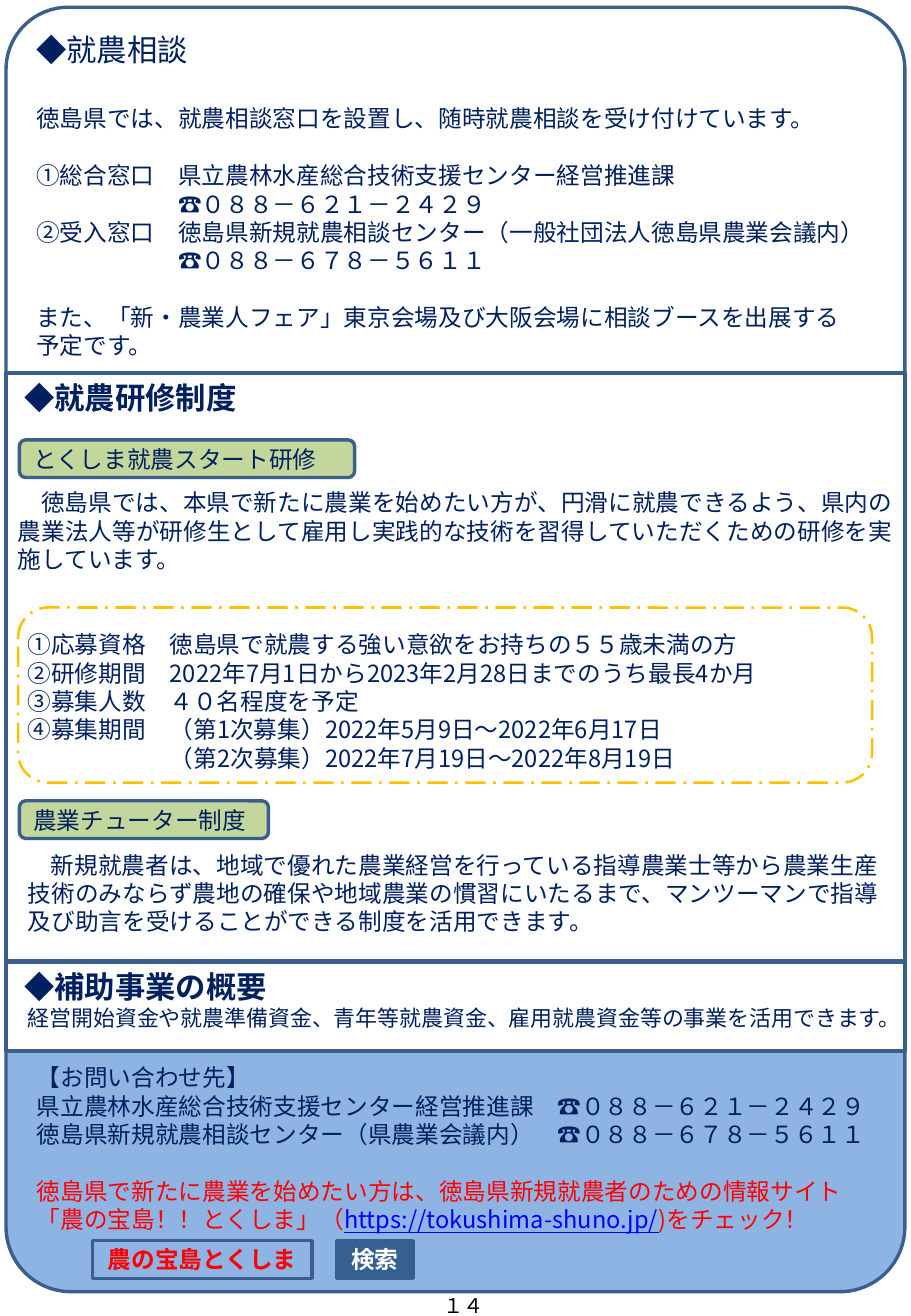
from dataclasses import dataclass

import lxml.etree
import pptx
import pptx.dml.color
import pptx.enum.dml
import pptx.enum.shapes
import pptx.enum.text
import pptx.oxml.ns
import pptx.util

PX = 9144  # 100 px to the inch
NOTO, LATIN = "Noto Sans CJK JP", "Calibri"
NAVY, RED, BLUE, WHITE, BLACK = "002060", "FF0000", "0000FF", "FFFFFF", "000000"
EDGE, GREEN, SKY, STEEL, GOLD = "3A5F8C", "C3D69B", "8EB4E3", "376092", "FFC000"
SITE = "https://tokushima-shuno.jp/"
LEAD = 1.2  # line pitch per point of text
HEAD, BODY = 18, 14
GAP, WIDE = BODY * LEAD, HEAD * LEAD  # one empty line of each size

KIND = pptx.enum.shapes.MSO_SHAPE
RECT, ROUND, TAB = KIND.RECTANGLE, KIND.ROUNDED_RECTANGLE, KIND.ROUND_2_SAME_RECTANGLE
TOP = pptx.enum.text.MSO_ANCHOR.TOP
MID = pptx.enum.text.MSO_ANCHOR.MIDDLE


@dataclass
class Row:
    text: str
    size: int = BODY
    left: int = 0  # px
    first: int = 0  # px, first line only
    before: float = 0  # pt
    color: str = NAVY
    bold: bool = False
    font: str = NOTO
    center: bool = False
    link: str = ""


@dataclass
class Box:
    kind: KIND | None  # None makes a plain text box
    at: tuple[int, int, int, int]
    rows: tuple[Row, ...] = ()
    fill: str = ""
    line: str = EDGE
    width: float = 2
    adjust: tuple[float, ...] = ()
    anchor: pptx.enum.text.MSO_ANCHOR = TOP
    pad: int = 5  # px above the text
    dash: bool = False
    wrap: bool = True


def rgb(code: str) -> pptx.dml.color.RGBColor:
    return pptx.dml.color.RGBColor.from_string(code)


def write(para, row: Row) -> None:
    props = para._p.get_or_add_pPr()
    props.set("marL", str(row.left * PX))
    props.set("indent", str(row.first * PX))
    side = pptx.enum.text.PP_ALIGN
    para.alignment = side.CENTER if row.center else side.LEFT
    para.line_spacing = pptx.util.Pt(row.size * LEAD)
    if row.before:
        para.space_before = pptx.util.Pt(row.before)
    font = para.font
    font.size, font.bold, font.name = pptx.util.Pt(row.size), row.bold, row.font
    font.color.rgb = rgb(row.color)
    # East Asian typeface
    base = props.find(pptx.oxml.ns.qn("a:defRPr"))
    lxml.etree.SubElement(base, pptx.oxml.ns.qn("a:ea")).set("typeface", NOTO)
    parts = row.text.partition(row.link) if row.link else (row.text,)
    for part in parts:
        run = para.add_run()
        run.text = part
        if part == row.link:
            run.font.color.rgb = rgb(BLUE)
            run.font.underline = True


def draw(slide, box: Box) -> None:
    place = [n * PX for n in box.at]
    if box.kind is None:
        shape = slide.shapes.add_textbox(*place)
    else:
        shape = slide.shapes.add_shape(box.kind, *place)
        shape.shadow.inherit = False
        for i, value in enumerate(box.adjust):
            shape.adjustments[i] = value
        if box.fill:
            shape.fill.solid()
            shape.fill.fore_color.rgb = rgb(box.fill)
        else:
            shape.fill.background()
        shape.line.color.rgb = rgb(box.line)
        shape.line.width = pptx.util.Pt(box.width)
        if box.dash:
            shape.line.dash_style = pptx.enum.dml.MSO_LINE.LONG_DASH_DOT
    frame = shape.text_frame
    frame.word_wrap = box.wrap
    frame.vertical_anchor = box.anchor
    frame.margin_left = frame.margin_right = 10 * PX
    frame.margin_top, frame.margin_bottom = box.pad * PX, 5 * PX
    for i, row in enumerate(box.rows):
        write(frame.add_paragraph() if i else frame.paragraphs[0], row)


def label(text: str, top: int, width: int) -> Box:
    return Box(ROUND, (16, top, width, 31), (Row(text),), GREEN,
               adjust=(0.17,), anchor=MID)


def button(text: str, left: int, width: int, color: str, fill: str = "") -> Box:
    row = Row(text, color=color, bold=True, font=LATIN, center=True)
    return Box(RECT, (left, 1021, width, 31), (row,), fill, anchor=MID)


BOXES = (
    # Advice desk
    Box(TAB, (5, 6, 740, 301), (
        Row("◆就農相談", HEAD, font=LATIN),
        Row("徳島県では、就農相談窓口を設置し、随時就農相談を受け付けています。", before=WIDE),
        Row("①総合窓口　県立農林水産総合技術支援センター経営推進課", before=GAP),
        Row("☎０８８－６２１－２４２９", left=117),
        Row("②受入窓口　徳島県新規就農相談センター（一般社団法人徳島県農業会議内）"),
        Row("☎０８８－６７８－５６１１", left=117),
        Row("また、「新・農業人フェア」東京会場及び大阪会場に相談ブースを出展する", before=GAP),
        Row("予定です。"),
    ), adjust=(0.17, 0)),
    # Training
    Box(RECT, (5, 307, 740, 484), (
        Row("◆就農研修制度", HEAD, left=5, bold=True),
        Row("徳島県では、本県で新たに農業を始めたい方が、円滑に就農できるよう、県内の農業法人等が"
            "研修生として雇用し実践的な技術を習得していただくための研修を実施しています。",
            first=19, before=2 * WIDE),
        Row("①応募資格　徳島県で就農する強い意欲をお持ちの５５歳未満の方", left=8, before=2 * GAP),
        Row("②研修期間　2022年7月1日から2023年2月28日までのうち最長4か月", left=8),
        Row("③募集人数　４０名程度を予定", left=8),
        Row("④募集期間　（第1次募集）2022年5月9日～2022年6月17日", left=8),
        Row("（第2次募集）2022年7月19日～2022年8月19日", left=125),
    )),
    # Contact
    Box(TAB, (5, 865, 740, 198), (
        Row("【お問い合わせ先】"),
        Row("県立農林水産総合技術支援センター経営推進課　☎０８８－６２１－２４２９"),
        Row("徳島県新規就農相談センター（県農業会議内）　☎０８８－６７８－５６１１"),
        Row("徳島県で新たに農業を始めたい方は、徳島県新規就農者のための情報サイト",
            before=GAP, color=RED),
        Row(f"「農の宝島！！とくしま」（{SITE})をチェック！", color=RED, link=SITE),
    ), SKY, adjust=(0, 0.27), pad=10),
    label("とくしま就農スタート研修", 362, 276),
    label("農業チューター制度", 659, 205),
    # Tutor scheme
    Box(None, (13, 695, 729, 80), (
        Row("新規就農者は、地域で優れた農業経営を行っている指導農業士等から農業生産技術のみならず"
            "農地の確保や地域農業の慣習にいたるまで、マンツーマンで指導及び助言を受けることができる"
            "制度を活用できます。", first=19),
    )),
    # Search bar
    button("農の宝島とくしま", 76, 181, RED),
    button("検索", 277, 63, WHITE, STEEL),
    # Grants
    Box(TAB, (5, 792, 740, 73), (
        Row("◆補助事業の概要", HEAD, left=5, bold=True),
        Row("経営開始資金や就農準備資金、青年等就農資金、雇用就農資金等の事業を活用できます。",
            13, left=8),
    ), adjust=(0, 0)),
    # Frame round the terms
    Box(ROUND, (15, 500, 703, 144), line=GOLD, width=1.5, adjust=(0.17,), dash=True),
    # Page number
    Box(None, (355, 1059, 53, 30), (Row("１４", 12, color=BLACK, font=LATIN),), wrap=False),
)


def main() -> None:
    deck = pptx.Presentation()
    deck.slide_width, deck.slide_height = 750 * PX, 1083 * PX
    slide = deck.slides.add_slide(deck.slide_layouts[6])
    for box in BOXES:
        draw(slide, box)
    deck.save("out.pptx")


if __name__ == "__main__":
    main()
